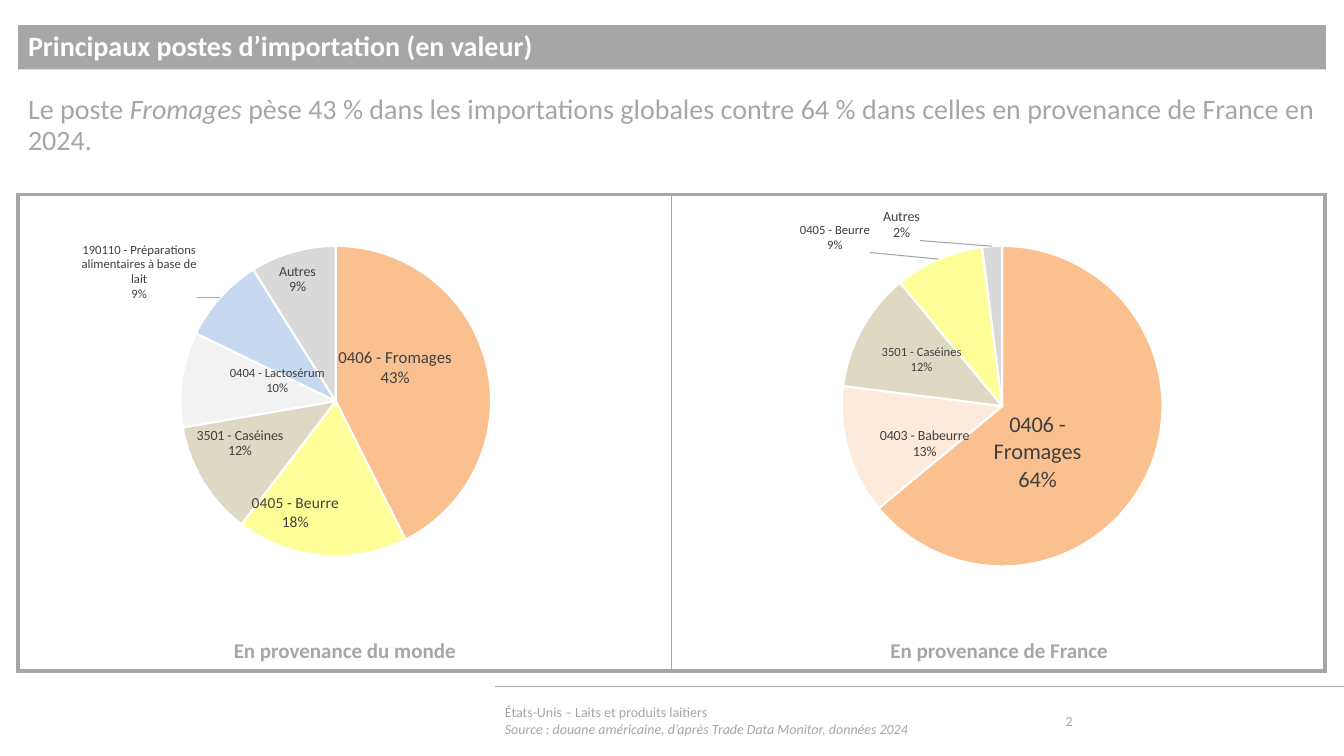
import math
from dataclasses import dataclass

import lxml.etree
import pptx
import pptx.chart.data
import pptx.dml.color
import pptx.enum.chart
import pptx.enum.shapes
import pptx.enum.text
import pptx.oxml
import pptx.oxml.ns
import pptx.util

Inches = pptx.util.Inches
Pt = pptx.util.Pt
qn = pptx.oxml.ns.qn
ALIGN = pptx.enum.text.PP_ALIGN
ANCHOR = pptx.enum.text.MSO_ANCHOR


@dataclass(frozen=True)
class Theme:
    font: str = "Calibri"
    grey: str = "A6A6A6"
    white: str = "FFFFFF"
    label: str = "404040"
    heading: float = 20
    caption: float = 15
    footer: float = 10
    chart: float = 8


@dataclass(frozen=True)
class Slice:
    """A pie slice; label_at is the label's centre on the slide, in inches."""
    name: str
    value: float
    color: str
    label_size: float
    label_at: tuple


def rgb(color):
    return pptx.dml.color.RGBColor.from_string(color)


def child(parent, tag, **attributes):
    element = lxml.etree.SubElement(parent, qn(tag))
    for key, value in attributes.items():
        element.set(key, str(value))
    return element


def solid_line(parent, color):
    child(child(parent, "a:solidFill"), "a:srgbClr", val=color)


class SlideBuilder:
    def __init__(self, slide, theme):
        self.slide = slide
        self.theme = theme

    def fill_frame(self, frame, paragraphs, size, color, bold=False, align=ALIGN.LEFT,
                   anchor=ANCHOR.TOP, spacing=None):
        """Fill a frame; each paragraph is a list of (text, italic) runs."""
        frame.word_wrap = True
        frame.vertical_anchor = anchor
        for index, runs in enumerate(paragraphs):
            paragraph = frame.add_paragraph() if index else frame.paragraphs[0]
            paragraph.alignment = align
            paragraph.line_spacing = spacing
            for text, italic in runs:
                run = paragraph.add_run()
                run.text = text
                run.font.name = self.theme.font
                run.font.size = Pt(size)
                run.font.bold = bold
                run.font.italic = italic
                run.font.color.rgb = rgb(color)

    def text(self, box, paragraphs, size, **style):
        frame = self.slide.shapes.add_textbox(*map(Inches, box)).text_frame
        self.fill_frame(frame, paragraphs, size, self.theme.grey, **style)

    def banner(self, box, title):
        band = self.slide.shapes.add_shape(
            pptx.enum.shapes.MSO_SHAPE.RECTANGLE, *map(Inches, box))
        band.shadow.inherit = False
        band.fill.solid()
        band.fill.fore_color.rgb = rgb(self.theme.grey)
        band.line.fill.background()
        self.fill_frame(band.text_frame, [[(title, False)]], self.theme.heading,
                        self.theme.white, bold=True, anchor=ANCHOR.MIDDLE, spacing=0.9)

    def rule(self, start, end, width):
        line = self.slide.shapes.add_connector(
            pptx.enum.shapes.MSO_CONNECTOR.STRAIGHT, *map(Inches, start + end))
        line.line.color.rgb = rgb(self.theme.grey)
        line.line.width = Pt(width)
        child(line._element.spPr, "a:effectLst")

    def panels(self, box, count):
        """A one-row table with a thick frame and thin inner dividers."""
        table = self.slide.shapes.add_table(1, count, *map(Inches, box)).table
        table.first_row = table.horz_banding = False
        for index, cell in enumerate(table.rows[0].cells):
            properties = cell._tc.get_or_add_tcPr()
            widths = {"a:lnL": 1 if index else 3,
                      "a:lnR": 1 if index < count - 1 else 3,
                      "a:lnT": 3, "a:lnB": 3}
            for side, width in widths.items():
                solid_line(child(properties, side, w=Pt(width)), self.theme.grey)
            cell.fill.background()

    def pie(self, box, center, radius, slices):
        left, top, width, height = box
        data = pptx.chart.data.CategoryChartData(number_format="0%")
        data.categories = [part.name for part in slices]
        data.add_series("Series 1", [part.value for part in slices])
        chart = self.slide.shapes.add_chart(
            pptx.enum.chart.XL_CHART_TYPE.PIE, *map(Inches, box), data).chart
        chart.has_legend = chart.has_title = False
        chart.font.name = self.theme.font
        chart.font.size = Pt(self.theme.chart)
        chart.font.color.rgb = rgb("000000")
        chart.plots[0].vary_by_categories = True

        plot_area = chart._chartSpace.chart.plotArea
        for layout in plot_area.findall(qn("c:layout")):
            plot_area.remove(layout)
        layout = lxml.etree.Element(qn("c:layout"))
        plot_area.insert(0, layout)
        manual = child(layout, "c:manualLayout")
        child(manual, "c:layoutTarget", val="inner")
        for axis in "xy":
            child(manual, f"c:{axis}Mode", val="edge")
        for key, value in (("x", (center[0] - radius - left) / width),
                           ("y", (center[1] - radius - top) / height),
                           ("w", 2 * radius / width), ("h", 2 * radius / height)):
            child(manual, f"c:{key}", val=round(value, 4))

        series = chart.plots[0].series[0]
        total = sum(part.value for part in slices)
        before = 0
        for index, part in enumerate(slices):
            point = series.points[index]
            point.format.fill.solid()
            point.format.fill.fore_color.rgb = rgb(part.color)
            point.format.line.color.rgb = rgb(self.theme.white)
            point.format.line.width = Pt(1.5)
            angle = 2 * math.pi * (before + part.value / 2) / total
            before += part.value
            middle = (center[0] + radius / 2 * math.sin(angle),
                      center[1] - radius / 2 * math.cos(angle))
            shift = ((part.label_at[0] - middle[0]) / width,
                     (part.label_at[1] - middle[1]) / height)
            self.slice_label(point.data_label, part.label_size, shift)

        leaders = child(series._element.find(qn("c:dLbls")), "c:leaderLines")
        solid_line(child(child(leaders, "c:spPr"), "a:ln", w=Pt(0.75)), self.theme.grey)

    def slice_label(self, label, size, shift):
        """Show name and value, moved from the slice's middle by shift."""
        label.font.name = self.theme.font
        label.font.size = Pt(size)
        label.font.color.rgb = rgb(self.theme.label)
        label.position = pptx.enum.chart.XL_LABEL_POSITION.CENTER
        element = label._dLbl
        element.find(qn("c:showCatName")).set("val", "1")
        child(element, "c:separator").text = "\n"
        layout = lxml.etree.Element(qn("c:layout"))
        manual = child(layout, "c:manualLayout")
        for axis, value in zip("xy", shift):
            child(manual, f"c:{axis}", val=round(value, 4))
        element.insert(1, layout)
        number = lxml.etree.Element(qn("c:numFmt"), formatCode="0%", sourceLinked="0")
        element.insert(2, number)


WORLD = [
    Slice("0406 - Fromages", 0.43, "FAC090", 12, (3.92, 3.65)),
    Slice("0405 - Beurre", 0.18, "FFFF99", 11, (2.93, 5.09)),
    Slice("3501 - Caséines", 0.12, "DDD9C3", 10, (2.38, 4.4)),
    Slice("0404 - Lactosérum", 0.1, "F2F2F2", 9, (2.75, 3.78)),
    Slice("190110 - Préparations alimentaires à base de lait", 0.09, "C6D9F1", 9,
          (1.38, 2.7)),
    Slice("Autres", 0.09, "D9D9D9", 10, (2.95, 2.77)),
]
FRANCE = [
    Slice("0406 - Fromages", 0.64, "FAC090", 16, (10.29, 4.49)),
    Slice("0403 - Babeurre", 0.13, "FDEADA", 10, (9.17, 4.4)),
    Slice("3501 - Caséines", 0.12, "DDD9C3", 9, (9.14, 3.57)),
    Slice("0405 - Beurre", 0.09, "FFFF99", 9, (8.28, 2.36)),
    Slice("Autres", 0.02, "D9D9D9", 10, (8.94, 2.23)),
]


def main():
    theme = Theme()
    deck = pptx.Presentation()
    deck.slide_width, deck.slide_height = Inches(13.33), Inches(7.5)
    page = SlideBuilder(deck.slides.add_slide(deck.slide_layouts[6]), theme)

    page.rule((13.33, 6.81), (4.91, 6.81), 0.5)
    page.panels((0.18, 1.93, 12.96, 4.73), 2)
    page.banner((0.18, 0.25, 12.97, 0.44), "Principaux postes d’importation (en valeur)")
    page.text((0.18, 0.9, 12.96, 0.81),
              [[("Le poste ", False), ("Fromages ", True),
                ("pèse 43 % dans les importations globales contre 64 % dans celles "
                 "en provenance de France en 2024.", False)]],
              theme.heading, align=ALIGN.JUSTIFY, spacing=0.9)

    for left, origin, center, radius, slices in (
            (0.18, "En provenance du monde", (3.33, 3.98), 1.54, WORLD),
            (6.67, "En provenance de France", (9.94, 4.03), 1.59, FRANCE)):
        page.pie((left, 1.93, 6.48, 4.16), center, radius, slices)
        page.text((left, 6.28, 6.48, 0.35), [[(origin, False)]], theme.caption,
                  bold=True, align=ALIGN.CENTER)

    page.text((4.91, 6.95, 5.43, 0.4),
              [[("États-Unis – Laits et produits laitiers", False)],
               [("Source : douane américaine, d’après Trade Data Monitor, données 2024",
                 True)]],
              theme.footer, anchor=ANCHOR.MIDDLE)
    page.text((10.47, 6.95, 0.99, 0.4), [[("2", False)]], theme.footer,
              anchor=ANCHOR.MIDDLE)
    deck.save("out.pptx")


if __name__ == "__main__":
    main()
